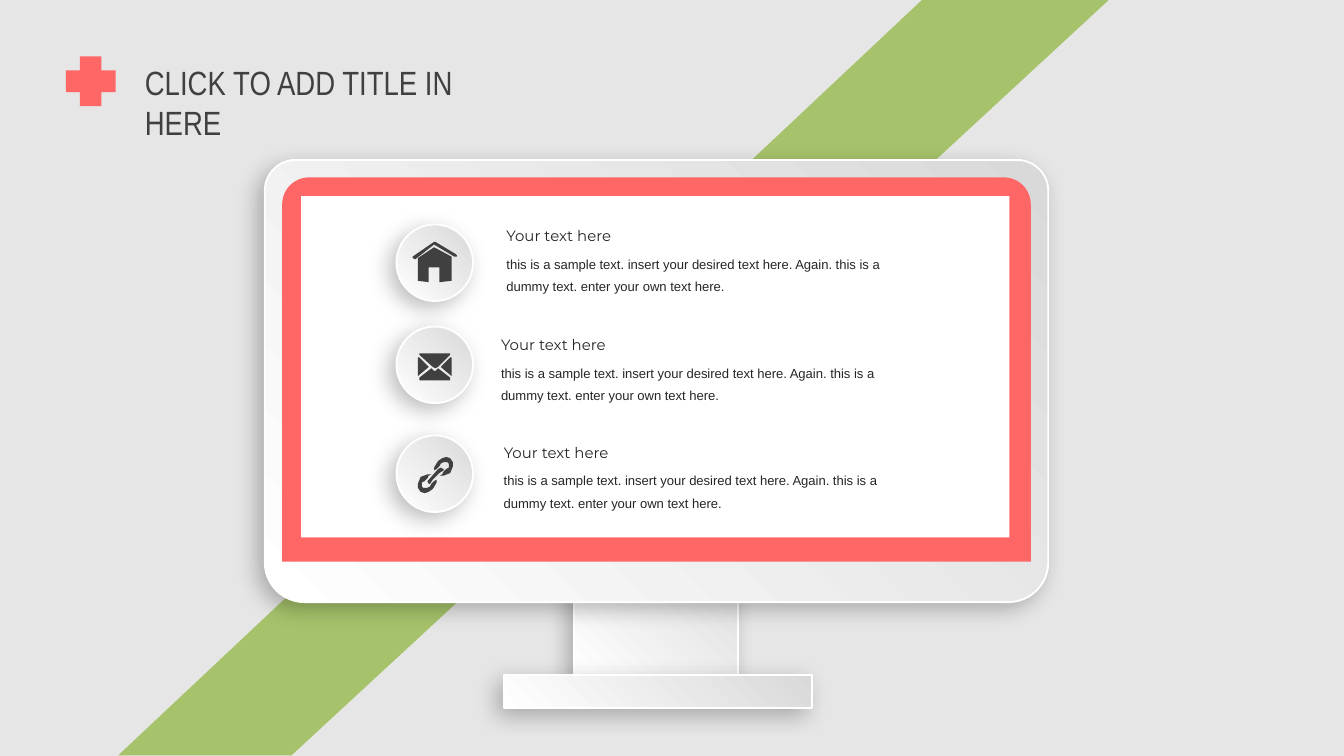
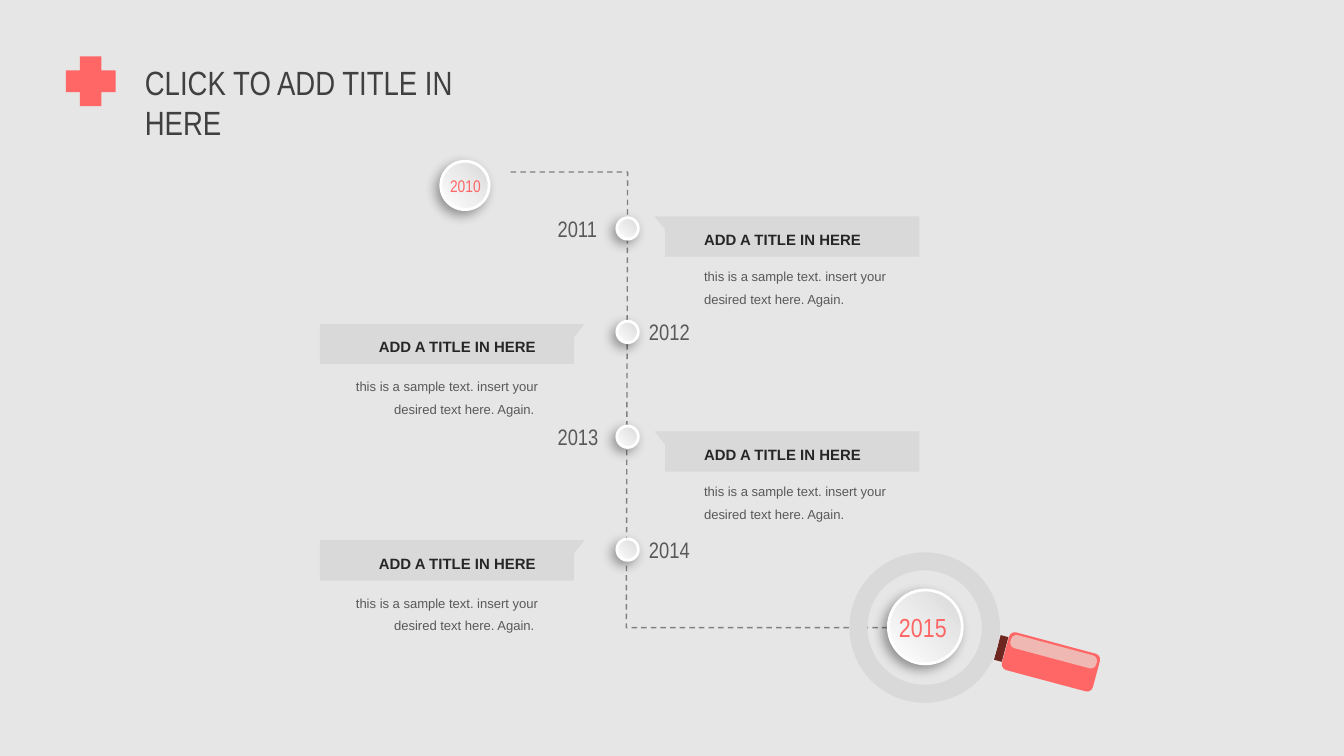
"""Builds a monitor slide and a timeline slide in one shared style."""
from lxml import etree
from pptx import Presentation
from pptx import util as u
from pptx.dml.color import RGBColor
from pptx.enum import dml, shapes, text
from pptx.oxml import ns

COLORS = {
    "back": "E7E6E6", "coral": "FF6666", "green": "A6C36B", "white": "FFFFFF",
    "silver": "D9D9D9", "title": "404040", "dark": "262626", "body": "595959",
    "dash": "808080", "collar": "6D2720", "gloss": "F0B8B2",
}
SHAPE = shapes.MSO_SHAPE
SAMPLE = "this is a sample text. insert your desired text here. Again."
SCREEN_SHADOW = (26, 12, 5)
DOT_SHADOW = (37, 6, 3)


class Deck:
    """Holds the shared style and the current slide."""

    def __init__(self):
        self.prs = Presentation()
        self.prs.slide_width = u.Inches(10)
        self.prs.slide_height = u.Inches(10 * 9 / 16)
        self.slide = None

    def color(self, name):
        return RGBColor.from_string(COLORS[name])

    def new_slide(self):
        self.slide = self.prs.slides.add_slide(self.prs.slide_layouts[6])
        fill = self.slide.background.fill
        fill.solid()
        fill.fore_color.rgb = self.color("back")
        self.text("CLICK TO ADD TITLE IN HERE", (0.98, 0.41, 2.87, 0.4), 18,
                  "Arial Narrow", "title")
        self.shape(SHAPE.CROSS, (0.49, 0.42, 0.37, 0.37), "coral", adjust=[0.284])

    def paint(self, shape, fill):
        shape.shadow.inherit = False
        shape.fill.solid()
        shape.fill.fore_color.rgb = self.color(fill)
        shape.line.fill.background()
        return shape

    def shape(self, kind, box, fill, adjust=(), turn=0):
        shape = self.slide.shapes.add_shape(kind, *map(u.Inches, box))
        for i, value in enumerate(adjust):
            shape.adjustments[i] = value
        shape.rotation = turn
        return self.paint(shape, fill)

    def raised(self, kind, box, shadow, border, adjust=()):
        shape = self.shape(kind, box, "white", adjust)
        shape.fill.gradient()
        shape.fill.gradient_angle = 45
        for stop, position, name in zip(shape.fill.gradient_stops, (0, 1), ("white", "silver")):
            stop.position = position
            stop.color.rgb = self.color(name)
        shape.line.color.rgb = self.color("white")
        shape.line.width = u.Pt(border)
        alpha, blur, distance = shadow
        effects = shape._element.spPr.find(ns.qn("a:effectLst"))
        outer = etree.SubElement(effects, ns.qn("a:outerShdw"), blurRad=str(u.Pt(blur)),
                                 dist=str(u.Pt(distance)), dir="8100000",
                                 algn="tr", rotWithShape="0")
        tint = etree.SubElement(outer, ns.qn("a:srgbClr"), val="000000")
        etree.SubElement(tint, ns.qn("a:alpha"), val=str(alpha * 1000))

    def outline(self, points, fill, closed=True):
        start, *rest = [(u.Inches(x), u.Inches(y)) for x, y in points]
        builder = self.slide.shapes.build_freeform(*start)
        builder.add_line_segments(rest, close=closed)
        return self.paint(builder.convert_to_shape(), fill)

    def dashed(self, points):
        route = self.outline(points, "dash", closed=False)
        route.fill.background()
        route.line.color.rgb = self.color("dash")
        route.line.width = u.Pt(0.75)
        route.line.dash_style = dml.MSO_LINE.DASH

    def text(self, words, box, size, font, color, wrap=True, bold=False,
             leading=None, right=False):
        frame = self.slide.shapes.add_textbox(*map(u.Inches, box)).text_frame
        frame.word_wrap = wrap
        frame.auto_size = text.MSO_AUTO_SIZE.SHAPE_TO_FIT_TEXT
        paragraph = frame.paragraphs[0]
        paragraph.alignment = text.PP_ALIGN.RIGHT if right else text.PP_ALIGN.LEFT
        if leading:
            paragraph.line_spacing = u.Pt(leading)
        run = paragraph.add_run()
        run.text = words
        run.font.size, run.font.name, run.font.bold = u.Pt(size), font, bold
        run.font.color.rgb = self.color(color)


def mirror(points, total):
    return [(total - x, y) for x, y in points]


def house_icon():
    walls = [(3.11, 1.92), (3.11, 2.09), (3.19, 2.1), (3.19, 1.99), (3.27, 1.99),
             (3.27, 2.1), (3.36, 2.09), (3.36, 1.91), (3.23, 1.84)]
    roof = [(3.39, 1.89), (3.24, 1.8), (3.23, 1.8), (3.07, 1.91), (3.07, 1.92),
            (3.09, 1.93), (3.23, 1.82), (3.38, 1.91), (3.4, 1.91), (3.4, 1.9)]
    return walls, roof


def envelope_icon():
    flap = [(3.22, 2.73), (3.24, 2.74), (3.26, 2.73), (3.35, 2.64), (3.35, 2.63),
            (3.12, 2.63), (3.12, 2.64)]
    side = [(3.36, 2.8), (3.36, 2.66), (3.35, 2.66), (3.28, 2.73), (3.29, 2.74), (3.35, 2.79)]
    base = [(3.35, 2.81), (3.26, 2.74), (3.24, 2.76), (3.23, 2.76), (3.21, 2.74),
            (3.12, 2.81), (3.12, 2.83), (3.35, 2.83)]
    return flap, side, base, mirror(side, 6.47)


def link_icon():
    loop = [(3.27, 3.54), (3.29, 3.53), (3.3, 3.51), (3.32, 3.49), (3.34, 3.48),
            (3.34, 3.45), (3.33, 3.44), (3.3, 3.44), (3.28, 3.45), (3.27, 3.47),
            (3.25, 3.49), (3.23, 3.5), (3.23, 3.48), (3.26, 3.43), (3.29, 3.41),
            (3.32, 3.4), (3.35, 3.41), (3.37, 3.44), (3.37, 3.47), (3.35, 3.52), (3.3, 3.54)]
    pin = [(3.28, 3.48), (3.3, 3.49), (3.3, 3.5), (3.27, 3.52), (3.22, 3.57),
           (3.2, 3.6), (3.19, 3.6), (3.18, 3.58), (3.19, 3.57), (3.26, 3.49)]
    return loop, pin, [(6.48 - x, 7.07 - y) for x, y in loop]


def monitor_slide(deck):
    deck.new_slide()
    deck.outline([(0.88, 5.62), (2.17, 5.62), (8.25, 0), (6.86, 0)], "green")
    deck.raised(SHAPE.RECTANGLE, (4.27, 3.88, 1.22, 1.19), SCREEN_SHADOW, 1)
    deck.raised(SHAPE.ROUND_2_SAME_RECTANGLE, (1.97, 1.19, 5.83, 3.29),
                SCREEN_SHADOW, 1, [0.07, 0.09])
    deck.shape(SHAPE.ROUND_2_SAME_RECTANGLE, (2.1, 1.32, 5.57, 2.86), "coral", [0.07, 0])
    deck.shape(SHAPE.RECTANGLE, (2.24, 1.46, 5.27, 2.54), "white")
    deck.raised(SHAPE.RECTANGLE, (3.75, 5.02, 2.29, 0.25), SCREEN_SHADOW, 1)
    items = [(1.67, 3.67, 1.64, 2.98, house_icon), (2.43, 3.63, 2.45, 3.1, envelope_icon),
             (3.24, 3.65, 3.25, 3, link_icon)]
    for badge_top, left, top, width, icon in items:
        deck.raised(SHAPE.OVAL, (2.95, badge_top, 0.57, 0.57), SCREEN_SHADOW, 1)
        for part in icon():
            deck.outline(part, "title")
        deck.text(SAMPLE + " this is a dummy text. enter your own text here.",
                  (left, top + 0.17, width, 0.44), 7, "Arial", "dark", leading=12)
        deck.text("Your text here", (left, top, 1.09, 0.24), 8, "Montserrat", "dark", wrap=False)


def timeline_slide(deck):
    deck.new_slide()
    deck.dashed([(3.8, 1.28), (4.67, 1.28), (4.66, 4.67), (6.95, 4.67)])
    stops = [("2011", 1.62, 1.61), ("2012", 2.39, 2.41),
             ("2013", 3.17, 3.21), ("2014", 4.01, 4.02)]
    for i, (year, dot_top, flag_top) in enumerate(stops):
        on_left = i % 2 == 1
        deck.raised(SHAPE.OVAL, (4.59, dot_top, 0.16, 0.16), DOT_SHADOW, 1.5)
        deck.text(year, (4.73 if on_left else 4.05, dot_top - 0.07, 0.52, 0.3), 12,
                  "Arial Narrow", "body", wrap=False)
        flag = [(4.87, flag_top), (6.84, flag_top), (6.84, flag_top + 0.3),
                (4.95, flag_top + 0.3), (4.95, flag_top + 0.1)]
        deck.outline(mirror(flag, 9.22) if on_left else flag, "silver")
        deck.text("ADD A TITLE IN HERE", (2.72 if on_left else 5.14, flag_top + 0.02, 1.4, 0.25),
                  8, "Arial", "dark", bold=True, leading=12)
        deck.text(SAMPLE + " " if on_left else SAMPLE,
                  (2.21 if on_left else 5.14, flag_top + (0.31 if on_left else 0.29), 1.89, 0.44),
                  7, "Arial", "body", leading=12, right=on_left)
    ends = [("2015", (6.61, 4.39, 0.55, 0.55), (6.59, 4.5, 0.59, 0.34), 14),
            ("2010", (3.28, 1.2, 0.36, 0.36), (3.25, 1.26, 0.45, 0.25), 9)]
    for year, disc, label, size in ends:
        deck.raised(SHAPE.OVAL, disc, DOT_SHADOW, 1.5)
        deck.text(year, label, size, "Arial Narrow", "coral", wrap=False)
    deck.shape(SHAPE.RECTANGLE, (7.42, 4.73, 0.06, 0.19), "collar", turn=15)
    deck.shape(SHAPE.ROUNDED_RECTANGLE, (7.47, 4.78, 0.7, 0.29), "coral", [0.15], 15)
    deck.shape(SHAPE.ROUNDED_RECTANGLE, (7.51, 4.8, 0.66, 0.1), "gloss", [0.4], 15)
    deck.shape(SHAPE.DONUT, (6.32, 4.11, 1.12, 1.12), "silver", [0.12])


def main():
    deck = Deck()
    monitor_slide(deck)
    timeline_slide(deck)
    deck.prs.save("out.pptx")


if __name__ == "__main__":
    main()
